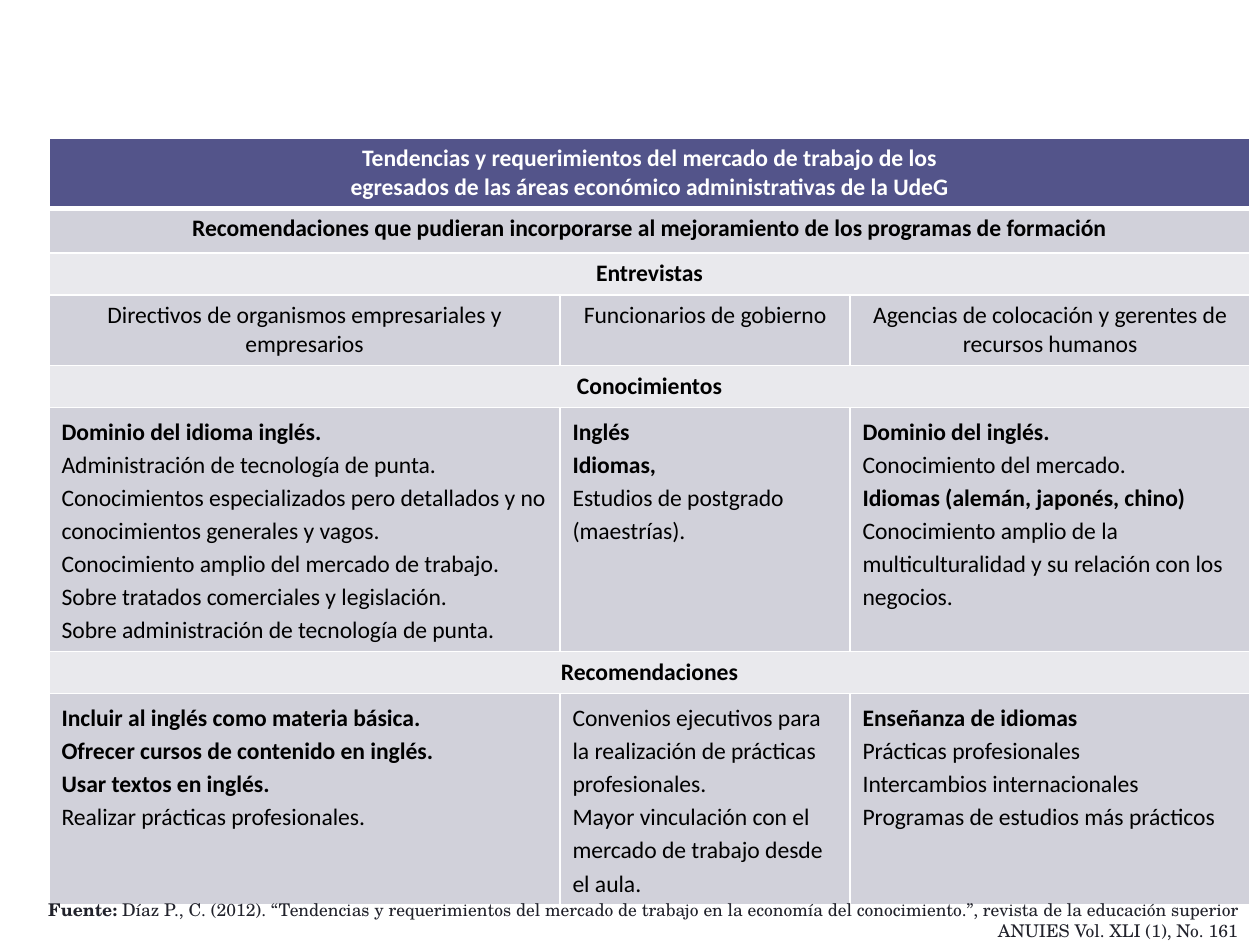
from dataclasses import dataclass

from lxml.etree import SubElement
from pptx import Presentation
from pptx.dml.color import RGBColor as Color
from pptx.enum.text import PP_ALIGN as Align
from pptx.oxml.ns import qn
from pptx.util import Emu, Pt

PX = 914400 / 126


@dataclass(frozen=True)
class Theme:
    """Colours, fonts and type sizes of the slide."""
    header: str = "53548A"
    band: str = "E9E9ED"
    body: str = "D1D1DA"
    white: str = "FFFFFF"
    black: str = "000000"
    source: str = "21222B"
    table_font: str = "Calibri"
    source_font: str = "TeX Gyre Schola"
    table_size: float = 13.5
    source_size: float = 10


THEME = Theme()
COLUMNS = [511, 290, 400]


def strong(text):
    """Mark a line as bold."""
    return text, True


def plain(text):
    """Mark a line as regular."""
    return text, False


TITLE = [strong("Tendencias y requerimientos del mercado de trabajo de los"),
         strong("egresados de las áreas económico administrativas de la UdeG")]
SUBTITLE = [strong("Recomendaciones que pudieran incorporarse al mejoramiento de los programas de formación")]
GROUPS = [
    [plain("Directivos de organismos empresariales y empresarios")],
    [plain("Funcionarios de gobierno")],
    [plain("Agencias de colocación y gerentes de recursos humanos")],
]
KNOWLEDGE = [
    [strong("Dominio del idioma inglés."),
     plain("Administración de tecnología de punta."),
     plain("Conocimientos especializados pero detallados y no conocimientos generales y vagos."),
     plain("Conocimiento amplio del mercado de trabajo."),
     plain("Sobre tratados comerciales y legislación."),
     plain("Sobre administración de tecnología de punta.")],
    [strong("Inglés"),
     strong("Idiomas,"),
     plain("Estudios de postgrado"),
     plain("(maestrías).")],
    [strong("Dominio del inglés."),
     plain("Conocimiento del mercado."),
     strong("Idiomas (alemán, japonés, chino)"),
     plain("Conocimiento amplio de la"),
     plain("multiculturalidad y su relación con los negocios.")],
]
ADVICE = [
    [strong("Incluir al inglés como materia básica."),
     strong("Ofrecer cursos de contenido en inglés."),
     strong("Usar textos en inglés."),
     plain("Realizar prácticas profesionales.")],
    [plain("Convenios ejecutivos para la realización de prácticas profesionales."),
     plain("Mayor vinculación con el mercado de trabajo desde el aula.")],
    [strong("Enseñanza de idiomas"),
     plain("Prácticas profesionales"),
     plain("Intercambios internacionales"),
     plain("Programas de estudios más prácticos")],
]
CENTRED = {"alignment": Align.CENTER}
LISTED = {"alignment": Align.LEFT, "line_spacing": 1.15}
ROWS = [
    (68, [TITLE], THEME.header, CENTRED),
    (45, [SUBTITLE], THEME.body, CENTRED),
    (42, [[strong("Entrevistas")]], THEME.band, CENTRED),
    (70, GROUPS, THEME.body, CENTRED),
    (42, [[strong("Conocimientos")]], THEME.band, CENTRED),
    (244, KNOWLEDGE, THEME.body, LISTED),
    (42, [[strong("Recomendaciones")]], THEME.band, CENTRED),
    (210, ADVICE, THEME.body, LISTED),
]
SOURCE = [
    strong("Fuente: "),
    plain("Díaz P., C. (2012). “Tendencias y requerimientos del mercado de trabajo en la economía del "
          "conocimiento.”, revista de la educación superior ANUIES Vol. XLI (1), No. 161"),
]


def px(length):
    """Turn whole pixels into EMU."""
    return Emu(round(length * PX))


def apply(target, values):
    """Set each attribute named in the values."""
    for name, value in values.items():
        setattr(target, name, value)


def add_run(paragraph, text, color, values):
    """Add one formatted run to a paragraph."""
    run = paragraph.add_run()
    run.text = text
    apply(run.font, values)
    run.font.color.rgb = Color.from_string(color)


def set_borders(cell, widths):
    """Draw white borders of the given point widths around a cell."""
    properties = cell._tc.get_or_add_tcPr()
    for side, width in widths.items():
        line = SubElement(properties, qn(f"a:ln{side}"), w=str(Pt(width)))
        fill = SubElement(line, qn("a:solidFill"))
        SubElement(fill, qn("a:srgbClr"), val=THEME.white)


def fill_cell(cell, lines, color, layout):
    """Write the lines of a cell, one paragraph each."""
    frame = cell.text_frame
    for index, (text, bold) in enumerate(lines):
        paragraph = frame.add_paragraph() if index else frame.paragraphs[0]
        apply(paragraph, layout)
        add_run(paragraph, text, color,
                {"name": THEME.table_font, "size": Pt(THEME.table_size), "bold": bold})


def add_trends_table(slide):
    """Add the table of labour market trends."""
    heights = [row[0] for row in ROWS]
    shape = slide.shapes.add_table(len(ROWS), len(COLUMNS), px(49), px(138),
                                   px(sum(COLUMNS)), px(sum(heights)))
    table = shape.table
    for column, width in zip(table.columns, COLUMNS):
        column.width = px(width)
    for index, (height, contents, background, layout) in enumerate(ROWS):
        table.rows[index].height = px(height)
        is_header = background == THEME.header
        cells = list(table.rows[index].cells)
        for cell in cells:
            set_borders(cell, {"L": 1, "R": 1, "T": 3 if index == 1 else 1, "B": 3 if is_header else 1})
            cell.fill.solid()
            cell.fill.fore_color.rgb = Color.from_string(background)
        if len(contents) == 1:
            cells[0].merge(cells[-1])
        for cell, lines in zip(cells, contents):
            fill_cell(cell, lines, THEME.white if is_header else THEME.black, layout)


def add_source(slide):
    """Add the source reference below the table."""
    frame = slide.shapes.add_textbox(px(0), px(893), px(1250), px(55)).text_frame
    frame.word_wrap = True
    paragraph = frame.paragraphs[0]
    paragraph.alignment = Align.RIGHT
    for text, bold in SOURCE:
        add_run(paragraph, text, THEME.source,
                {"name": THEME.source_font, "size": Pt(THEME.source_size), "bold": bold})


def main():
    """Build and save the slide."""
    presentation = Presentation()
    apply(presentation, {"slide_width": px(1260), "slide_height": px(945)})
    slide = presentation.slides.add_slide(presentation.slide_layouts[6])
    add_trends_table(slide)
    add_source(slide)
    presentation.save("out.pptx")


if __name__ == "__main__":
    main()
